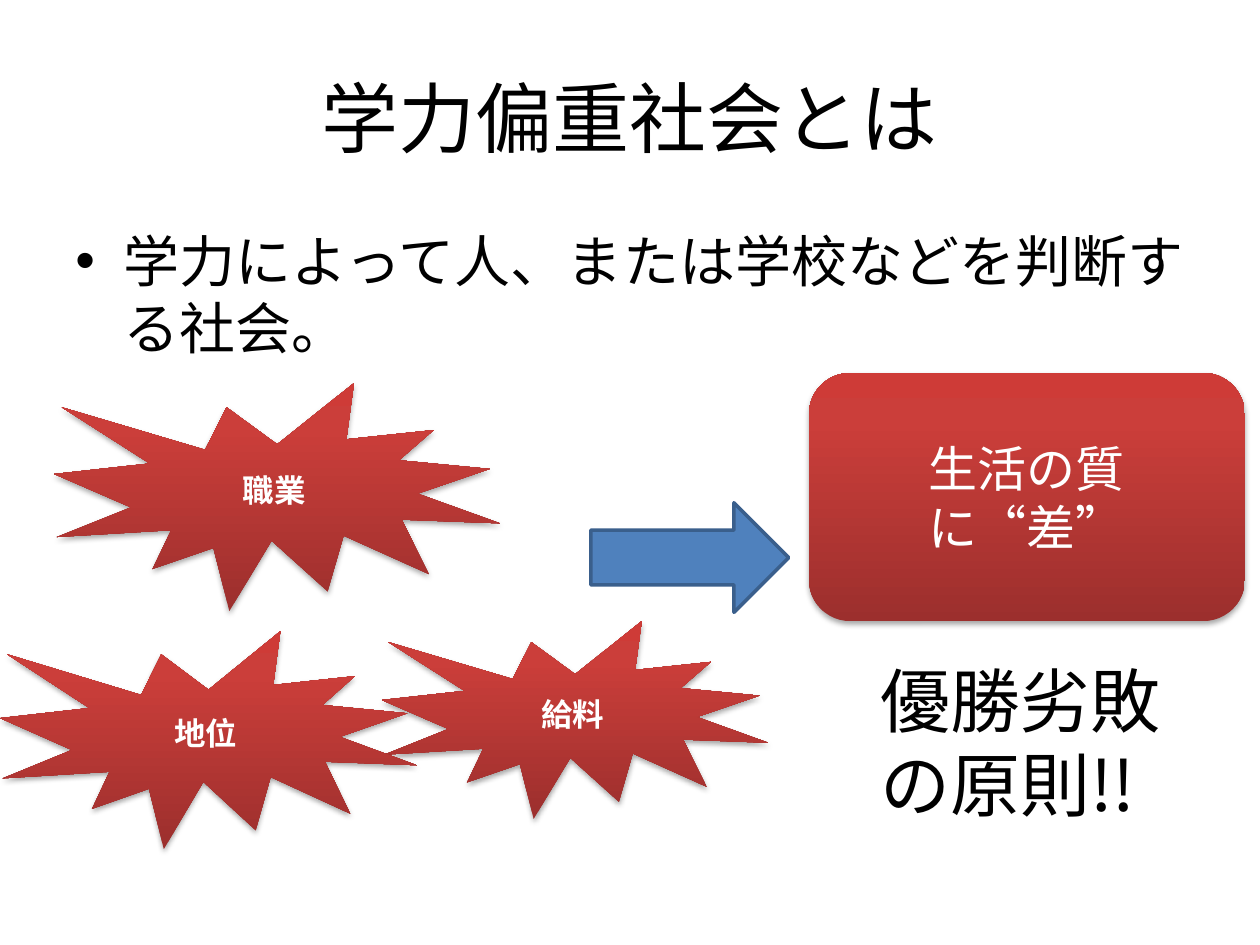
import pptx
import pptx.util
from lxml import etree
from pptx.dml.color import RGBColor
from pptx.enum.shapes import MSO_SHAPE
from pptx.enum.text import MSO_ANCHOR, PP_ALIGN
from pptx.oxml import parse_xml
from pptx.oxml.ns import nsdecls, qn

BLACK = RGBColor(0x00, 0x00, 0x00)
WHITE = RGBColor(0xFF, 0xFF, 0xFF)
BLUE = RGBColor(0x4F, 0x81, 0xBD)
DARK_BLUE = RGBColor(0x3A, 0x5F, 0x8C)
RED_STOPS = [
    (0, RGBColor(0x9C, 0x2F, 0x2D)),
    (80, RGBColor(0xCB, 0x3E, 0x3A)),
    (100, RGBColor(0xCE, 0x3B, 0x37)),
]

LATIN_FONT = "Calibri"
JAPANESE_FONT = "Noto Sans CJK JP"
MARGIN, CONTENT_WIDTH = 0.5, 9


def inches(*lengths):
    return [pptx.util.Inches(length) for length in lengths]


def add_run(paragraph, text, size, color, font=LATIN_FONT, bold=False):
    run = paragraph.add_run()
    run.text = text
    run.font.name = font
    run.font.size = pptx.util.Pt(size)
    run.font.bold = bold
    run.font.color.rgb = color


def set_title(slide, text):
    title = slide.shapes.title
    title.left, title.top, title.width, title.height = inches(
        MARGIN, 0.3, CONTENT_WIDTH, 1.25)
    title.text_frame.vertical_anchor = MSO_ANCHOR.MIDDLE
    paragraph = title.text_frame.paragraphs[0]
    paragraph.alignment = PP_ALIGN.CENTER
    add_run(paragraph, text, 44, BLACK)


def add_text(slide, box, text, size, font=LATIN_FONT):
    text_box = slide.shapes.add_textbox(*inches(*box))
    text_box.text_frame.word_wrap = True
    paragraph = text_box.text_frame.paragraphs[0]
    add_run(paragraph, text, size, BLACK, font)
    return paragraph


def add_bullet(paragraph, indent):
    """Give the paragraph a round bullet with a hanging indent."""
    properties = paragraph._p.get_or_add_pPr()
    properties.set("marL", str(pptx.util.Inches(indent)))
    properties.set("indent", str(-pptx.util.Inches(indent)))
    bullet_font = etree.SubElement(properties, qn("a:buFont"))
    bullet_font.set("typeface", "Arial")
    etree.SubElement(properties, qn("a:buChar")).set("char", "•")


def apply_red_style(shape):
    """Apply the upward red gradient and the soft shadow below."""
    shape.line.fill.background()
    stops = "".join(
        f'<a:gs pos="{position * 1000}"><a:srgbClr val="{color}"/></a:gs>'
        for position, color in RED_STOPS)
    gradient = parse_xml(
        f'<a:gradFill {nsdecls("a")} rotWithShape="1"><a:gsLst>{stops}</a:gsLst>'
        '<a:lin ang="16200000" scaled="0"/></a:gradFill>')
    shadow = parse_xml(
        f'<a:effectLst {nsdecls("a")}><a:outerShdw blurRad="40000" dist="23000" '
        'dir="5400000" rotWithShape="0"><a:srgbClr val="000000">'
        '<a:alpha val="35000"/></a:srgbClr></a:outerShdw></a:effectLst>')
    properties = shape._element.spPr
    properties.find(qn("a:prstGeom")).addnext(gradient)
    properties.find(qn("a:ln")).addnext(shadow)


def add_red_shape(slide, kind, box, text, size, bold=False):
    shape = slide.shapes.add_shape(kind, *inches(*box))
    apply_red_style(shape)
    shape.text_frame.word_wrap = True
    shape.text_frame.vertical_anchor = MSO_ANCHOR.MIDDLE
    paragraph = shape.text_frame.paragraphs[0]
    paragraph.alignment = PP_ALIGN.CENTER
    add_run(paragraph, text, size, WHITE, bold=bold)


def add_arrow(slide, box):
    arrow = slide.shapes.add_shape(MSO_SHAPE.RIGHT_ARROW, *inches(*box))
    arrow.shadow.inherit = False
    arrow.fill.solid()
    arrow.fill.fore_color.rgb = BLUE
    arrow.line.color.rgb = DARK_BLUE
    arrow.line.width = pptx.util.Pt(2)


def main():
    presentation = pptx.Presentation()
    presentation.slide_width, presentation.slide_height = inches(10, 7.5)
    slide = presentation.slides.add_slide(presentation.slide_layouts[5])

    # Title and definition
    set_title(slide, "学力偏重社会とは")
    definition = add_text(slide, (MARGIN, 1.75, CONTENT_WIDTH, 2.71),
                          "学力によって人、または学校などを判断する社会。", 32)
    definition.space_before = pptx.util.Pt(6.4)
    add_bullet(definition, 0.38)

    # Bursts: what academic record decides
    bursts = [
        ("給料", (3.03, 4.93, 3.07, 1.57)),
        ("地位", (0, 5.01, 3.31, 1.73)),
        ("職業", (0.43, 3.04, 3.54, 1.81)),
    ]
    for label, box in bursts:
        add_red_shape(slide, MSO_SHAPE.EXPLOSION1, box, label, 18, bold=True)

    # Consequence
    add_arrow(slide, (4.69, 3.99, 1.57, 0.87))
    add_red_shape(slide, MSO_SHAPE.ROUNDED_RECTANGLE, (6.42, 2.96, 3.46, 1.97),
                  "生活の質に“差”", 28)
    add_text(slide, (6.89, 5.17, 2.83, 1.45), "優勝劣敗の原則!!", 40, JAPANESE_FONT)

    presentation.save("out.pptx")


if __name__ == "__main__":
    main()
